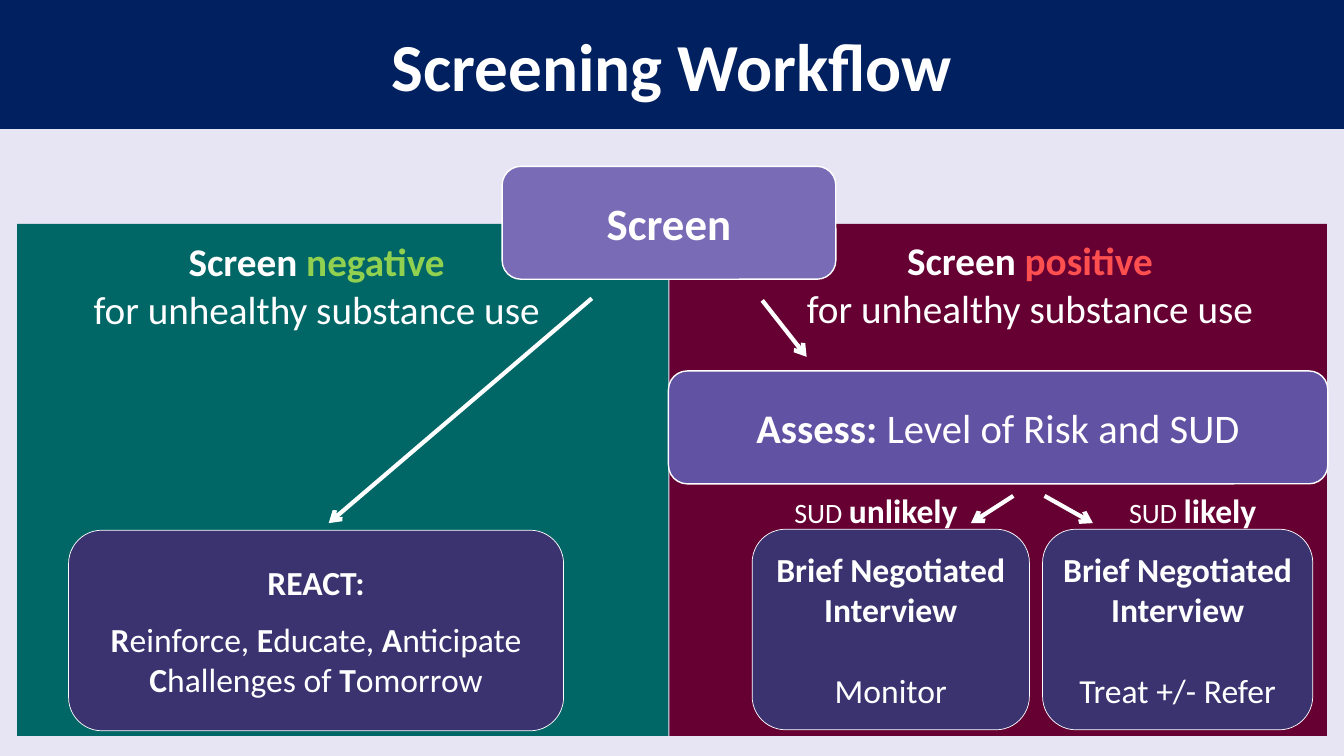
import dataclasses
import lxml.etree
import pptx
import pptx.dml.color
import pptx.enum.shapes
import pptx.enum.text
import pptx.oxml.ns
import pptx.util

PX = 9144  # 100 px to the inch
KIND = pptx.enum.shapes.MSO_SHAPE
ALIGN = pptx.enum.text.PP_ALIGN
ANCHOR = pptx.enum.text.MSO_ANCHOR
FIT = pptx.enum.text.MSO_AUTO_SIZE


@dataclasses.dataclass(frozen=True)
class Theme:
    font: str = "Calibri"
    # Colours
    back: str = "E7E5F3"
    white: str = "FFFFFF"
    navy: str = "002060"
    teal: str = "006666"
    wine: str = "660033"
    lilac: str = "796BB5"
    violet: str = "6252A4"
    indigo: str = "3B3270"
    green: str = "92D050"
    red: str = "FF4F4F"
    # Type sizes
    title: int = 48
    screen: int = 32
    assess: int = 29
    branch: int = 28
    body: int = 24
    small: int = 20


THEME = Theme()


def rgb(code):
    return pptx.dml.color.RGBColor.from_string(code)


def paint(fill, code):
    fill.solid()
    fill.fore_color.rgb = rgb(code)


def style(item, form):
    for name, value in form.items():
        setattr(item, name, value)


def bold(text, **form):
    return text, {"bold": True, **form}


def plain(text, **form):
    return text, {"bold": False, **form}


def write(frame, paras, size, align=ALIGN.CENTER, gaps=()):
    """Each paragraph is a list of runs; gaps holds the space before each."""
    for i, runs in enumerate(paras):
        para = frame.paragraphs[0] if i == 0 else frame.add_paragraph()
        para.alignment = align
        if gaps:
            para.space_before = pptx.util.Pt(gaps[i])
        for text, form in runs:
            run = para.add_run()
            run.text = text
            form = {"name": THEME.font, "size": size, "color": THEME.white, **form}
            run.font.color.rgb = rgb(form.pop("color"))
            form["size"] = pptx.util.Pt(form["size"])
            style(run.font, form)


def add_box(slide, kind, area, fill, edge=0):
    box = slide.shapes.add_shape(kind, *(n * PX for n in area))
    box.shadow.inherit = False
    paint(box.fill, fill)
    if edge:
        paint(box.line.fill, THEME.white)
        box.line.width = pptx.util.Pt(edge)
    else:
        box.line.fill.background()
    return box


def add_step(slide, area, fill, edge, paras, size, gaps=()):
    box = add_box(slide, KIND.FLOWCHART_ALTERNATE_PROCESS, area, fill, edge)
    style(box.text_frame, {"word_wrap": True, "vertical_anchor": ANCHOR.MIDDLE})
    write(box.text_frame, paras, size, gaps=gaps)


def add_label(slide, area, paras, size, align=ALIGN.CENTER):
    label = slide.shapes.add_textbox(*(n * PX for n in area))
    style(label.text_frame, {"word_wrap": False, "auto_size": FIT.SHAPE_TO_FIT_TEXT})
    write(label.text_frame, paras, size, align)


def add_arrow(slide, *ends):
    wire = slide.shapes.add_connector(
        pptx.enum.shapes.MSO_CONNECTOR.STRAIGHT, *(n * PX for n in ends))
    paint(wire.line.fill, THEME.white)
    wire.line.width = pptx.util.Pt(3)
    qn = pptx.oxml.ns.qn
    props = wire.element.spPr
    lxml.etree.SubElement(props.find(qn("a:ln")), qn("a:tailEnd"), type="arrow")
    lxml.etree.SubElement(props, qn("a:effectLst"))


def add_title(slide, text):
    title = slide.shapes.title
    style(title, dict(left=0, top=0, width=1333 * PX, height=128 * PX))
    paint(title.fill, THEME.navy)
    style(title.text_frame, {"word_wrap": True, "auto_size": FIT.NONE,
                             "vertical_anchor": ANCHOR.MIDDLE})
    write(title.text_frame, [[bold(text)]], THEME.title)


def main():
    deck = pptx.Presentation()
    style(deck, {"slide_width": 1333 * PX, "slide_height": 750 * PX})
    slide = deck.slides.add_slide(deck.slide_layouts[5])
    paint(slide.background.fill, THEME.back)
    add_title(slide, "Screening Workflow")

    # Negative and positive halves
    add_box(slide, KIND.RECTANGLE, (664, 222, 652, 508), THEME.wine)
    add_box(slide, KIND.RECTANGLE, (17, 222, 646, 508), THEME.teal)

    # Screening and assessment
    add_step(slide, (498, 165, 331, 112), THEME.lilac, 1,
             [[bold("Screen")]], THEME.screen)
    add_step(slide, (663, 368, 654, 112), THEME.violet, 1,
             [[bold("Assess:"), plain(" Level of Risk and SUD")]], THEME.assess)

    # Headings of the halves
    for area, word, hue in (((80, 231, 468, 104), "negative", THEME.green),
                            ((761, 230, 521, 104), "positive", THEME.red)):
        add_label(slide, area, [[bold("Screen "), bold(word, color=hue)],
                                [plain("for unhealthy substance use")]], THEME.branch)

    # Response to a negative screen
    react = [run for head, rest in (("R", "einforce, "), ("E", "ducate, "),
                                    ("A", "nticipate "), ("C", "hallenges of "),
                                    ("T", "omorrow"))
             for run in (bold(head), plain(rest))]
    add_step(slide, (68, 526, 491, 199), THEME.indigo, 0.5,
             [[bold("REACT:")], react], THEME.body, (12, 12))

    # Responses to a positive screen
    for left, width, action, mark, start, span in (
            (746, 275, "Monitor", "unlikely", 778, 184),
            (1034, 268, "Treat +/- Refer", "likely", 1110, 148)):
        add_step(slide, (left, 525, width, 199), THEME.indigo, 0.5,
                 [[bold("Brief Negotiated Interview")], [plain(action)]],
                 THEME.body, (0, 29))
        add_label(slide, (start, 481, span, 50),
                  [[plain("SUD ", size=THEME.small), bold(mark)]],
                  THEME.body, ALIGN.LEFT)

    # Flow between the steps
    for ends in ((587, 296, 326, 519), (756, 298, 800, 354),
                 (1005, 492, 963, 519), (1036, 492, 1084, 519)):
        add_arrow(slide, *ends)

    deck.save("out.pptx")


if __name__ == "__main__":
    main()
